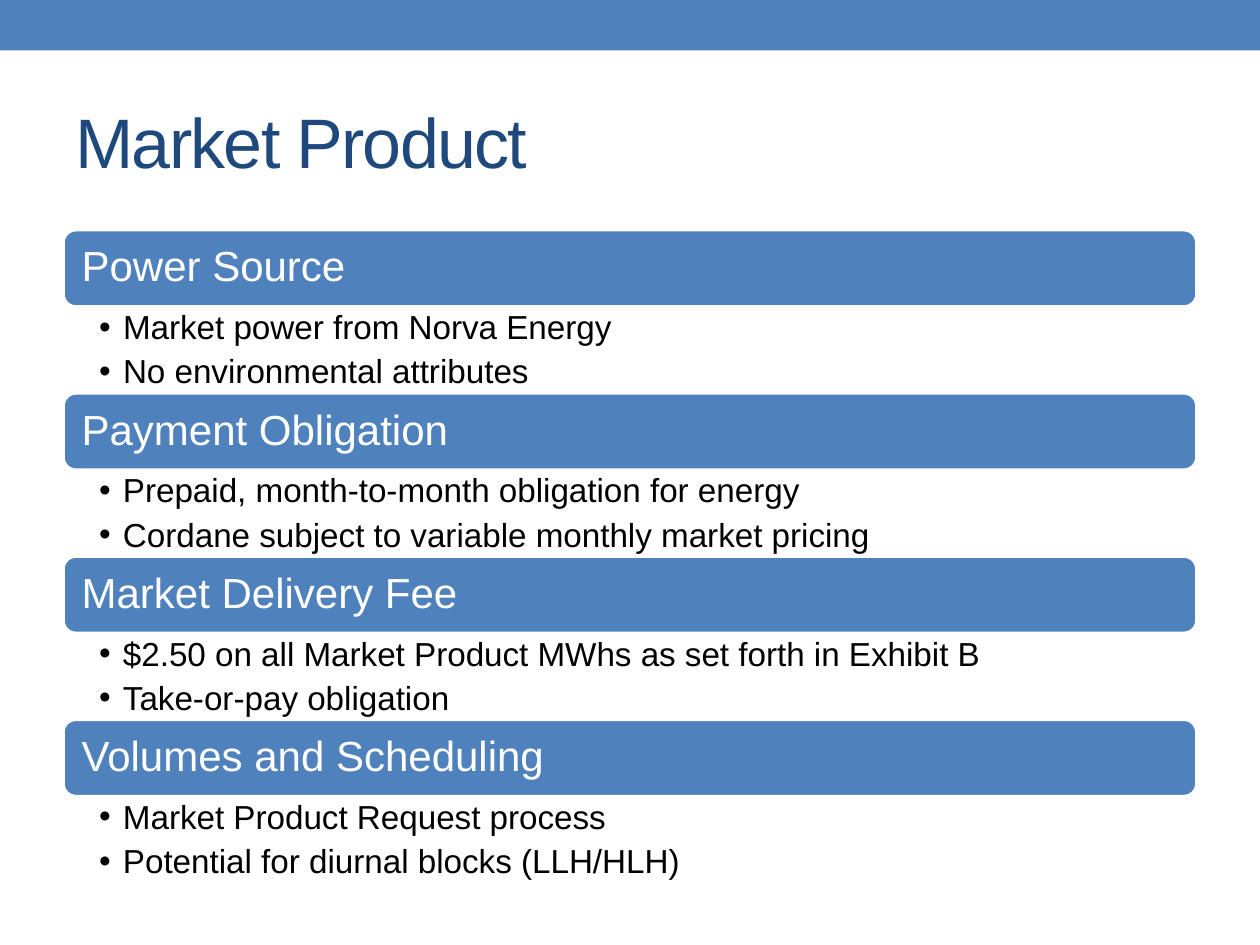
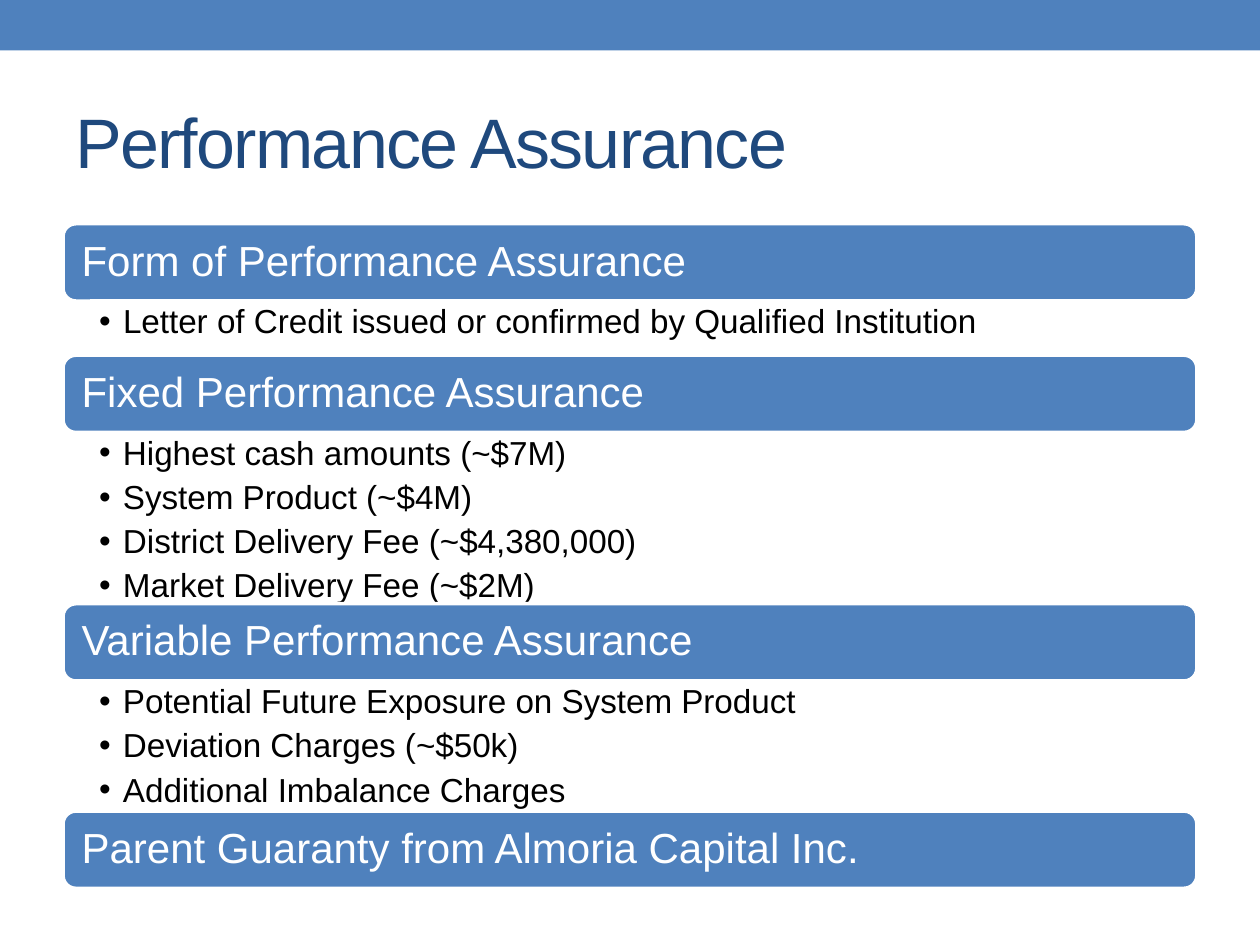
from dataclasses import dataclass

from lxml import etree
from pptx import Presentation
from pptx.dml.color import RGBColor
from pptx.enum.shapes import MSO_SHAPE
from pptx.enum.text import MSO_ANCHOR, MSO_AUTO_SIZE, PP_ALIGN
from pptx.oxml.ns import qn
from pptx.util import Cm, Pt

RECTANGLE = MSO_SHAPE.RECTANGLE
ROUNDED = MSO_SHAPE.ROUNDED_RECTANGLE
LEFT = PP_ALIGN.LEFT
TOP, MIDDLE = MSO_ANCHOR.TOP, MSO_ANCHOR.MIDDLE
NO_AUTOFIT = MSO_AUTO_SIZE.NONE

# Content: slide title, then (heading, points) sections
SLIDES = [
    ("Market Product", [
        ("Power Source", [
            "Market power from Norva Energy",
            "No environmental attributes"]),
        ("Payment Obligation", [
            "Prepaid, month-to-month obligation for energy",
            "Cordane subject to variable monthly market pricing"]),
        ("Market Delivery Fee", [
            "$2.50 on all Market Product MWhs as set forth in Exhibit B",
            "Take-or-pay obligation"]),
        ("Volumes and Scheduling", [
            "Market Product Request process",
            "Potential for diurnal blocks (LLH/HLH)"]),
    ]),
    ("Performance Assurance", [
        ("Form of Performance Assurance", [
            "Letter of Credit issued or confirmed by Qualified Institution"]),
        ("Fixed Performance Assurance", [
            "Highest cash amounts (~$7M)",
            "System Product (~$4M)",
            "District Delivery Fee (~$4,380,000)",
            "Market Delivery Fee (~$2M)"]),
        ("Variable Performance Assurance", [
            "Potential Future Exposure on System Product",
            "Deviation Charges (~$50k)",
            "Additional Imbalance Charges"]),
        ("Parent Guaranty from Almoria Capital Inc.", []),
    ]),
]


@dataclass(frozen=True)
class Theme:
    font: str = "Arial"
    blue: RGBColor = RGBColor(0x4F, 0x81, 0xBD)
    navy: RGBColor = RGBColor(0x1F, 0x49, 0x7D)
    white: RGBColor = RGBColor(0xFF, 0xFF, 0xFF)
    black: RGBColor = RGBColor(0, 0, 0)
    title_size: Pt = Pt(40)
    heading_size: Pt = Pt(24)
    point_size: Pt = Pt(19)
    line_spacing: float = 0.9


THEME = Theme()

# Layout
SLIDE_W, SLIDE_H = Cm(25.4), Cm(19.05)
BAND_H = Cm(1.02)
MARGIN = Cm(1.27)
CONTENT_W = SLIDE_W - 2 * MARGIN
TITLE_TOP, TITLE_H = Cm(1.47), Cm(2.74)
STACK_MIDDLE = Cm(11.21)
HEADING_H = Cm(1.56)
LIST_H = {0: Cm(0), 1: Cm(1.09), 2: Cm(1.73), 3: Cm(2.62), 4: Cm(3.45)}
BULLET_INDENT = Cm(0.48)


def place(shape, left, top, width, height):
    shape.left, shape.top, shape.width, shape.height = left, top, width, height


def set_frame(frame, anchor, left, top, right, bottom):
    frame.word_wrap = True
    frame.auto_size = NO_AUTOFIT
    frame.vertical_anchor = anchor
    frame.margin_left, frame.margin_top = left, top
    frame.margin_right, frame.margin_bottom = right, bottom


def style(paragraph, size, color):
    paragraph.alignment = LEFT
    for run in paragraph.runs:
        run.font.name = THEME.font
        run.font.size = size
        run.font.color.rgb = color


def add_block(shapes, kind, left, top, width, height):
    block = shapes.add_shape(kind, left, top, width, height)
    block.shadow.inherit = False
    block.fill.solid()
    block.fill.fore_color.rgb = THEME.blue
    return block


def add_band_to_master(prs, slide):
    """The top band belongs to the master, behind its placeholders."""
    band = add_block(slide.shapes, RECTANGLE, 0, 0, SLIDE_W, BAND_H)
    band.line.fill.background()
    prs.slide_master.shapes.element.insert(2, band.element)


def set_title(slide, text):
    title = slide.shapes.title
    place(title, MARGIN, TITLE_TOP, CONTENT_W, TITLE_H)
    title.text_frame.text = text
    set_frame(title.text_frame, MIDDLE, Cm(0.25), Cm(0.13), Cm(0.25), Cm(0.13))
    heading = title.text_frame.paragraphs[0]
    style(heading, THEME.title_size, THEME.navy)
    for run in heading.runs:
        run.font._element.set("spc", "-100")


def add_heading(slide, text, top):
    bar = add_block(slide.shapes, ROUNDED, MARGIN, top, CONTENT_W, HEADING_H)
    bar.line.color.rgb = THEME.white
    bar.line.width = Pt(2.08)
    bar.text_frame.text = text
    set_frame(bar.text_frame, MIDDLE, Cm(0.3), Cm(0.25), Cm(0.3), Cm(0.25))
    heading = bar.text_frame.paragraphs[0]
    heading.line_spacing = THEME.line_spacing
    style(heading, THEME.heading_size, THEME.white)


def add_bullet(paragraph):
    props = paragraph._p.get_or_add_pPr()
    props.set("marL", str(BULLET_INDENT))
    props.set("indent", str(-BULLET_INDENT))
    etree.SubElement(props, qn("a:buFont")).set("typeface", THEME.font)
    etree.SubElement(props, qn("a:buChar")).set("char", "•")


def fill_list(holder, points, top):
    place(holder, MARGIN, top, CONTENT_W, LIST_H[len(points)])
    frame = holder.text_frame
    frame.text = "\n".join(points)
    set_frame(frame, TOP, Cm(0.73), Cm(0.08), Cm(0.48), Cm(0.08))
    for point in frame.paragraphs:
        point.line_spacing = THEME.line_spacing
        point.space_before = Pt(0)
        point.space_after = Pt(4.7)
        style(point, THEME.point_size, THEME.black)
        add_bullet(point)


def add_sections(slide, sections):
    """Stack the sections, centred; the first list fills the body placeholder."""
    stack_h = sum(HEADING_H + LIST_H[len(points)] for _, points in sections)
    top = STACK_MIDDLE - stack_h // 2
    body = slide.placeholders[1]
    for index, (heading, points) in enumerate(sections):
        add_heading(slide, heading, top)
        top += HEADING_H
        if points:
            holder = body if index == 0 else slide.shapes.add_textbox(0, 0, 0, 0)
            fill_list(holder, points, top)
            top += LIST_H[len(points)]


def main():
    prs = Presentation()
    prs.slide_width, prs.slide_height = SLIDE_W, SLIDE_H
    title_and_content = prs.slide_layouts[1]
    for number, (title, sections) in enumerate(SLIDES):
        slide = prs.slides.add_slide(title_and_content)
        if number == 0:
            add_band_to_master(prs, slide)
        set_title(slide, title)
        add_sections(slide, sections)
    prs.save("out.pptx")


if __name__ == "__main__":
    main()
